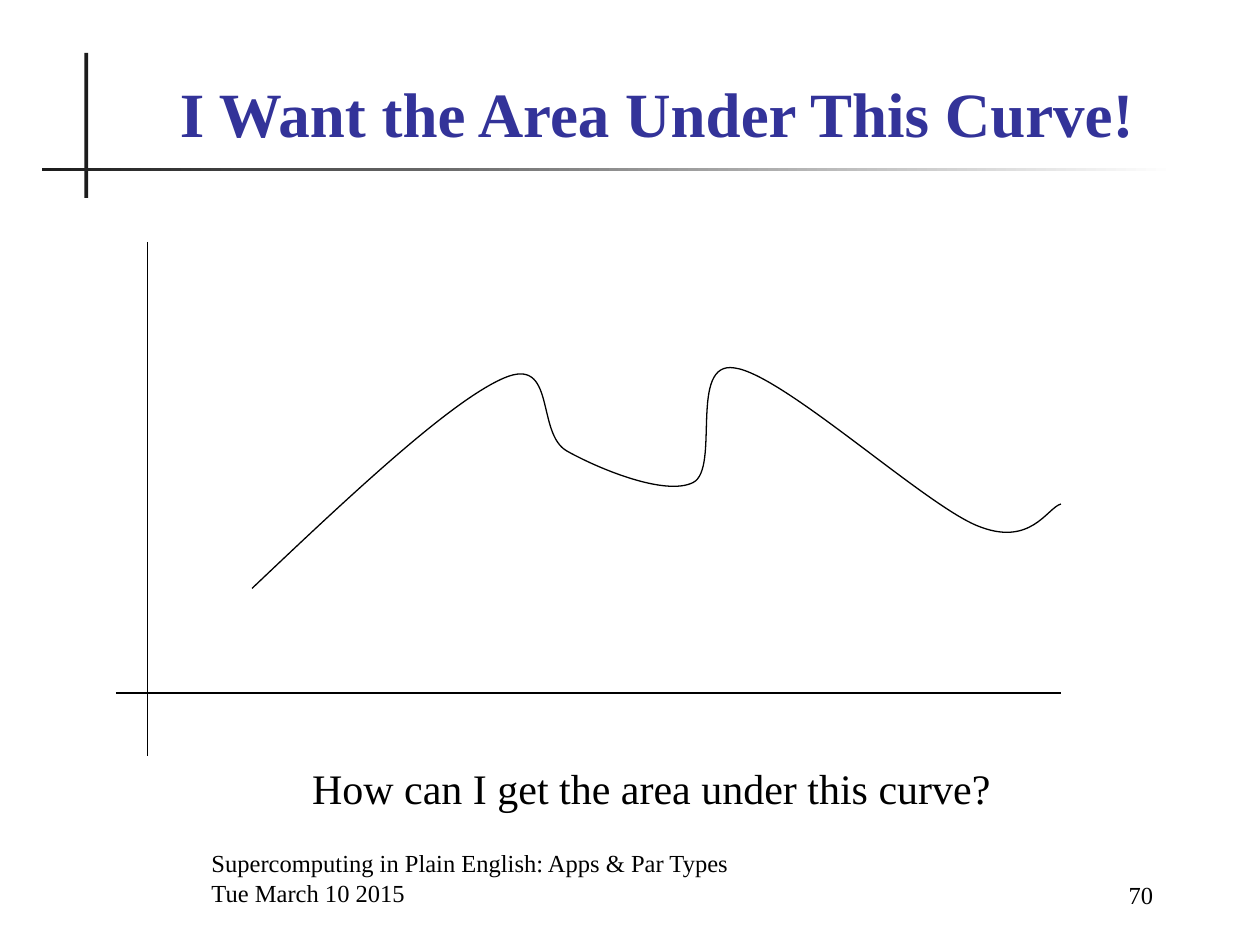
from itertools import chain

from lxml import etree
from pptx import Presentation
from pptx.dml.color import RGBColor
from pptx.enum.shapes import MSO_CONNECTOR as Connector, MSO_SHAPE as Shape
from pptx.enum.text import MSO_ANCHOR as Anchor, MSO_AUTO_SIZE as AutoSize, PP_ALIGN as Align
from pptx.oxml.ns import qn
from pptx.util import Inches, Pt

FONT = "Times New Roman"
BLACK, CHARCOAL, WHITE, INDIGO = "000000", "1C1C1C", "FFFFFF", "333399"

CURVE_START = (2, 4.67)
CURVE_SEGMENTS = [  # first control, second control, end
    ((2.79, 3.92), (3.58, 3.18), (4, 3)),
    ((4.42, 2.82), (4.25, 3.44), (4.5, 3.58)),
    ((4.75, 3.72), (5.28, 3.94), (5.5, 3.83)),
    ((5.72, 3.72), (5.46, 2.86), (5.83, 2.92)),
    ((6.21, 2.97), (7.32, 3.99), (7.75, 4.17)),
    ((8.18, 4.35), (8.31, 4.03), (8.42, 4)),
]


def color(hex_string):
    return RGBColor.from_string(hex_string)


def style_line(line):
    line.color.rgb = color(BLACK)
    line.width = Pt(0.75)


def add_bar(page, left, top, width, height, start, end=None):
    """Add a thin bar, fading to the end colour when one is given."""
    bar = page.shapes.add_shape(Shape.RECTANGLE, *map(Inches, (left, top, width, height)))
    bar.shadow.inherit = False
    bar.line.fill.background()
    if end is None:
        bar.fill.solid()
        bar.fill.fore_color.rgb = color(start)
        return
    bar.fill.gradient()
    bar.fill.gradient_angle = 0
    for stop, position, shade in zip(bar.fill.gradient_stops, (0, 1), (start, end)):
        stop.position = position
        stop.color.rgb = color(shade)


def add_text(page, left, top, width, height, lines, size, align=Align.LEFT,
             anchor=Anchor.BOTTOM, shade=BLACK, bold=False, fit=AutoSize.NONE):
    box = page.shapes.add_textbox(*map(Inches, (left, top, width, height)))
    frame = box.text_frame
    frame.word_wrap = True
    frame.auto_size = fit
    frame.vertical_anchor = anchor
    frame.text = "\n".join(lines)
    for para in frame.paragraphs:
        para.alignment = align
        para.font.name = FONT
        para.font.size = Pt(size)
        para.font.bold = bold
        para.font.color.rgb = color(shade)


def add_axis(page, start, end):
    axis = page.shapes.add_connector(Connector.STRAIGHT, *map(Inches, start + end))
    style_line(axis.line)
    etree.SubElement(axis.element.spPr, qn("a:effectLst"))


def add_curve(page, start, segments):
    """Lay out all curve points as line ends, then join each three into a cubic curve."""
    builder = page.shapes.build_freeform(*map(Inches, start))
    points = chain.from_iterable(segments)
    builder.add_line_segments([tuple(map(Inches, point)) for point in points], close=False)
    curve = builder.convert_to_shape()
    line_ends = list(curve.element.iter(qn("a:lnTo")))
    outline = line_ends[0].getparent()
    for first in range(0, len(line_ends), 3):
        cubic = etree.SubElement(outline, qn("a:cubicBezTo"))
        for line_end in line_ends[first:first + 3]:
            cubic.append(line_end[0])
            outline.remove(line_end)
    curve.shadow.inherit = False
    curve.fill.background()
    style_line(curve.line)


def main():
    deck = Presentation()
    deck.slide_width, deck.slide_height = Inches(10), Inches(7.5)
    page = deck.slides.add_slide(deck.slide_layouts[6])

    add_bar(page, 0.67, 0.42, 0.03, 1.15, CHARCOAL)
    add_bar(page, 0.33, 1.33, 9, 0.03, CHARCOAL, WHITE)
    add_text(page, 0.83, 0.5, 8.77, 0.74, ["I Want the Area Under This Curve!"], 36,
             Align.CENTER, shade=INDIGO, bold=True)

    add_axis(page, (1.17, 1.92), (1.17, 6))
    add_axis(page, (0.92, 5.5), (8.42, 5.5))
    add_curve(page, CURVE_START, CURVE_SEGMENTS)
    add_text(page, 0.92, 6, 8.5, 0.5, ["How can I get the area under this curve?"], 24,
             Align.CENTER, Anchor.TOP, fit=AutoSize.SHAPE_TO_FIT_TEXT)

    add_text(page, 1.58, 6.75, 6.08, 0.5,
             ["Supercomputing in Plain English: Apps & Par Types", "Tue March 10 2015"], 14)
    add_text(page, 7.83, 6.77, 1.42, 0.5, ["70"], 14, Align.RIGHT)

    deck.save("out.pptx")


if __name__ == "__main__":
    main()
